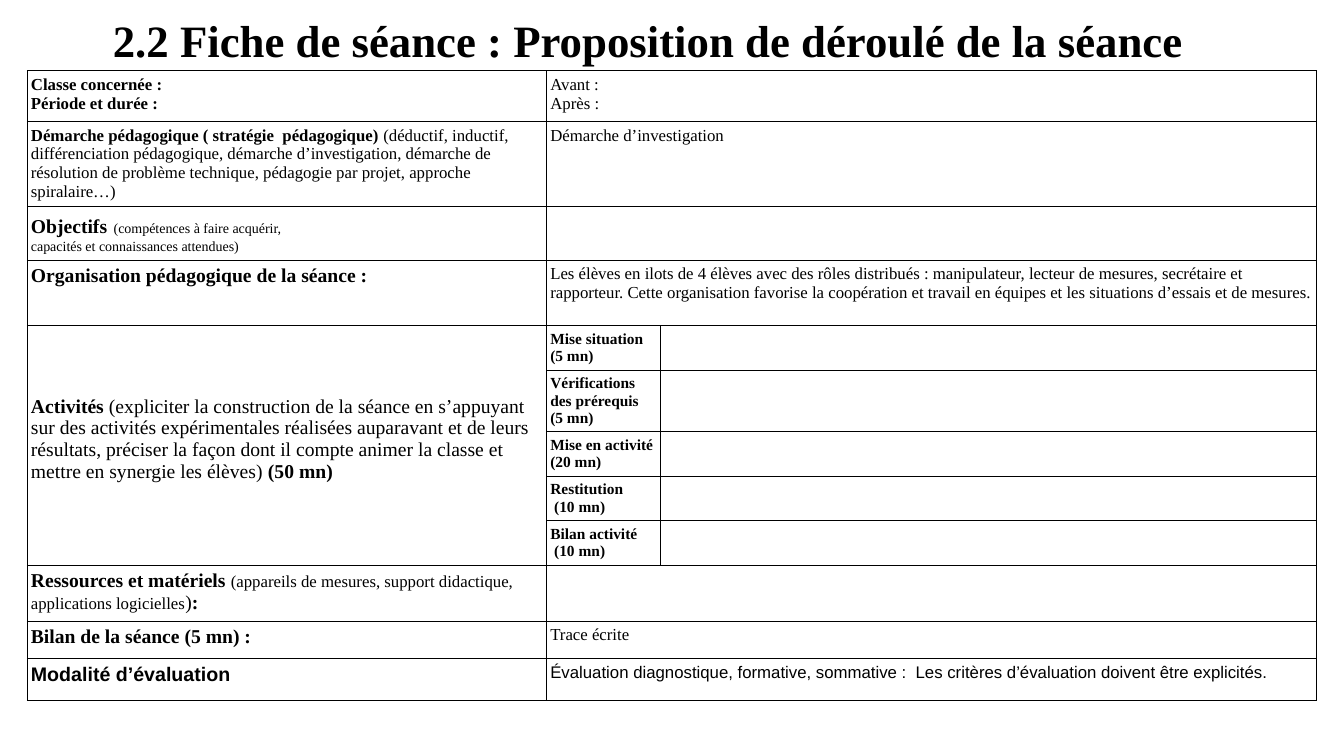
from dataclasses import dataclass

from lxml.etree import SubElement
from pptx import Presentation
from pptx.dml.color import RGBColor
from pptx.enum.text import MSO_ANCHOR, MSO_AUTO_SIZE, PP_ALIGN
from pptx.oxml.ns import qn
from pptx.util import Pt


@dataclass(frozen=True)
class Theme:
    """Colours, fonts and type sizes of the slide."""
    ink: str = "000000"
    serif: str = "Times New Roman"
    sans: str = "Arial"
    title: int = 32
    gap: int = 18
    head: int = 14
    body: int = 12
    step: int = 11
    note: int = 10
    rule: float = 0.57


T = Theme()


def bold(text, size=T.head):
    """Return a bold run."""
    return text, size, True


def plain(text, size=T.body):
    """Return a regular run."""
    return text, size, False


TITLE = "2.2 Fiche de séance : Proposition de déroulé de la séance"
WIDTHS = [371, 81.4, 468.6]

TOP = [
    (36, [[bold("Classe concernée :", T.body)], [bold("Période et durée :", T.body)]],
     [[plain("Avant :")], [plain("Après :")]]),
    (60, [[bold("Démarche pédagogique ( stratégie  pédagogique) ", T.body),
           plain("(déductif, inductif, différenciation pédagogique, démarche "
                 "d’investigation, démarche de résolution de problème technique, "
                 "pédagogie par projet, approche spiralaire…)")]],
     [[plain("Démarche d’investigation")]]),
    (38.5, [[bold("Objectifs"), bold(" ", T.gap),
             plain("(compétences à faire acquérir,", T.note)],
            [plain("capacités et connaissances attendues)", T.note)]], []),
    (47, [[bold("Organisation pédagogique de la séance :")]],
     [[plain("Les élèves en ilots de 4 élèves avec des rôles distribués : "
             "manipulateur, lecteur de mesures, secrétaire et rapporteur. Cette "
             "organisation favorise la coopération et travail en équipes et les "
             "situations d’essais et de mesures.")]]),
]

TASK = [[bold("Activités "),
         plain("(expliciter la construction de la séance en s’appuyant sur des "
               "activités expérimentales réalisées auparavant et de leurs résultats, "
               "préciser la façon dont il compte animer la classe et mettre en "
               "synergie les élèves) ", T.head),
         bold("(50 mn)")]]

STEPS = [
    (31.5, ["Mise situation (5 mn)"]),
    (44, ["Vérifications des prérequis", "(5 mn)"]),
    (31.5, ["Mise en activité (20 mn)"]),
    (31.5, ["Restitution", " (10 mn)"]),
    (31.5, ["Bilan activité", " (10 mn)"]),
]

END = [
    (40, [[bold("Ressources et matériels "),
           plain("(appareils de mesures, support didactique, applications logicielles"),
           plain(")", T.head), bold(":")]], []),
    (27, [[bold("Bilan de la séance (5 mn) :")]], [[plain("Trace écrite")]]),
    (29.5, [[bold("Modalité d’évaluation")]],
     [[plain("Évaluation diagnostique, formative, sommative :  "
             "Les critères d’évaluation doivent être explicités.")]]),
]


def style(font, size, heavy):
    """Set size, weight and colour of a font."""
    font.size, font.bold = Pt(size), heavy
    font.color.rgb = RGBColor.from_string(T.ink)


def frame(cell):
    """Give a cell its thin borders, margins and clear fill."""
    props = cell._tc.get_or_add_tcPr()
    for side in "LRTB":
        line = SubElement(props, qn(f"a:ln{side}"), w=str(Pt(T.rule)))
        fill = SubElement(line, qn("a:solidFill"))
        SubElement(fill, qn("a:srgbClr"), val=T.ink)
    cell.fill.background()
    cell.margin_left = cell.margin_right = Pt(2.7)
    cell.margin_top = cell.margin_bottom = Pt(3.6)
    cell.text_frame.paragraphs[0].font.size = Pt(T.step)


def write(cell, lines, face=T.serif):
    """Fill a cell with paragraphs made of styled runs."""
    text = cell.text_frame
    for n, runs in enumerate(lines):
        para = text.add_paragraph() if n else text.paragraphs[0]
        para.font.name = face
        for words, size, heavy in runs:
            run = para.add_run()
            run.text = words
            style(para.font if len(runs) == 1 else run.font, size, heavy)


def head(slide, left, top, width, height):
    """Place the slide title in its box."""
    shape = slide.shapes.title
    shape.left, shape.top = Pt(left), Pt(top)
    shape.width, shape.height = Pt(width), Pt(height)
    text = shape.text_frame
    text.text = TITLE
    text.auto_size = MSO_AUTO_SIZE.NONE
    text.vertical_anchor = MSO_ANCHOR.MIDDLE
    para = text.paragraphs[0]
    para.alignment = PP_ALIGN.LEFT
    para.line_spacing = 1.0
    para.font.name = T.serif
    style(para.font, T.title, True)


def plan(slide, left, top):
    """Place the lesson table with its corner at left and top."""
    sizes = [row[0] for row in TOP + STEPS + END]
    table = slide.shapes.add_table(
        len(sizes), len(WIDTHS), Pt(left), Pt(top),
        Pt(sum(WIDTHS)), Pt(sum(sizes))).table
    table.first_row = table.horz_banding = False
    for col, width in zip(table.columns, WIDTHS):
        col.width = Pt(width)
    for row, size in zip(table.rows, sizes):
        row.height = Pt(size)
    for cell in table.iter_cells():
        frame(cell)

    first, last = len(TOP), len(TOP) + len(STEPS)
    wide = [*range(first), *range(last, len(sizes))]
    for at, (_, label, value) in zip(wide, TOP + END):
        face = T.sans if at == wide[-1] else T.serif
        table.cell(at, 1).merge(table.cell(at, 2))
        write(table.cell(at, 0), label, face)
        write(table.cell(at, 1), value, face)

    task = table.cell(first, 0)
    task.merge(table.cell(last - 1, 0))
    task.margin_top = Pt(50)
    write(task, TASK)
    for at, (_, lines) in enumerate(STEPS, first):
        write(table.cell(at, 1), [[bold(line, T.step)] for line in lines])


def main():
    """Build and save the lesson slide."""
    deck = Presentation()
    deck.slide_width, deck.slide_height = Pt(960), Pt(540)
    slide = deck.slides.add_slide(deck.slide_layouts[5])
    head(slide, 73.4, 10.4, 824.4, 36)
    plan(slide, 19.4, 50.6)
    deck.save("out.pptx")


if __name__ == "__main__":
    main()
